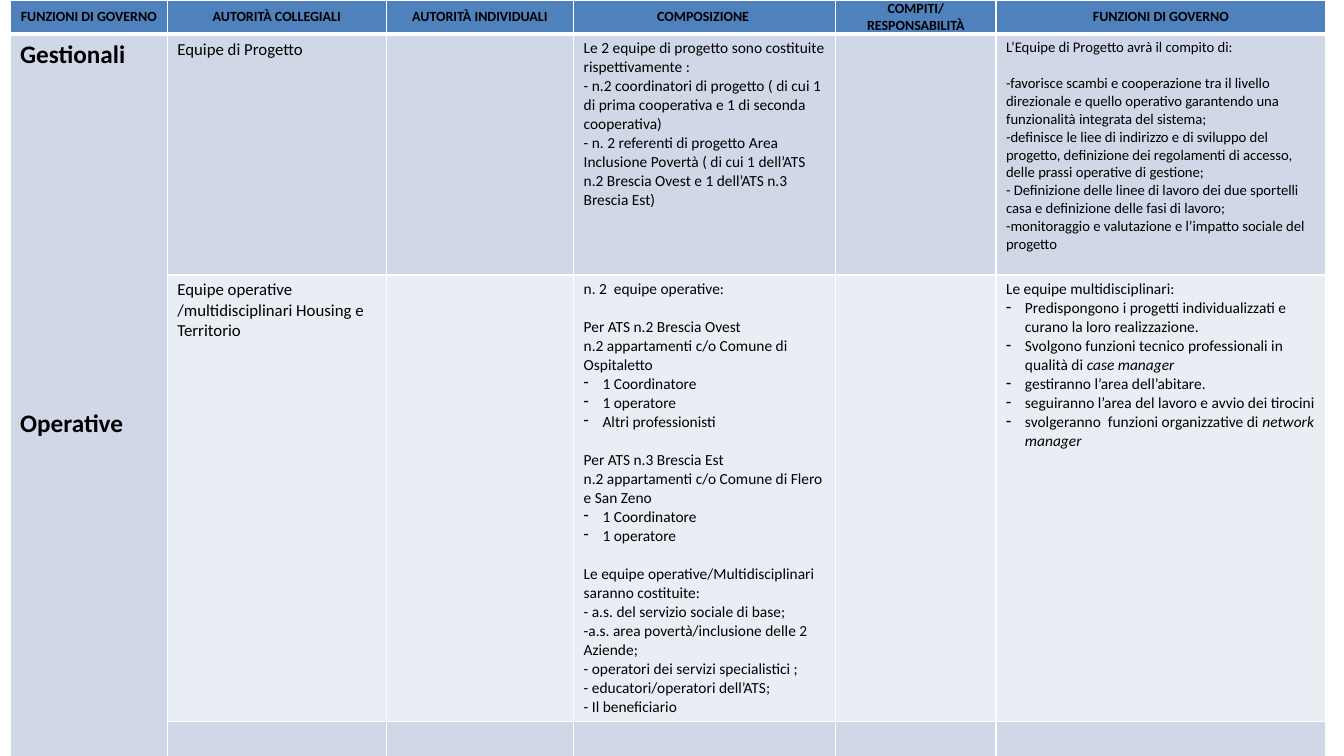
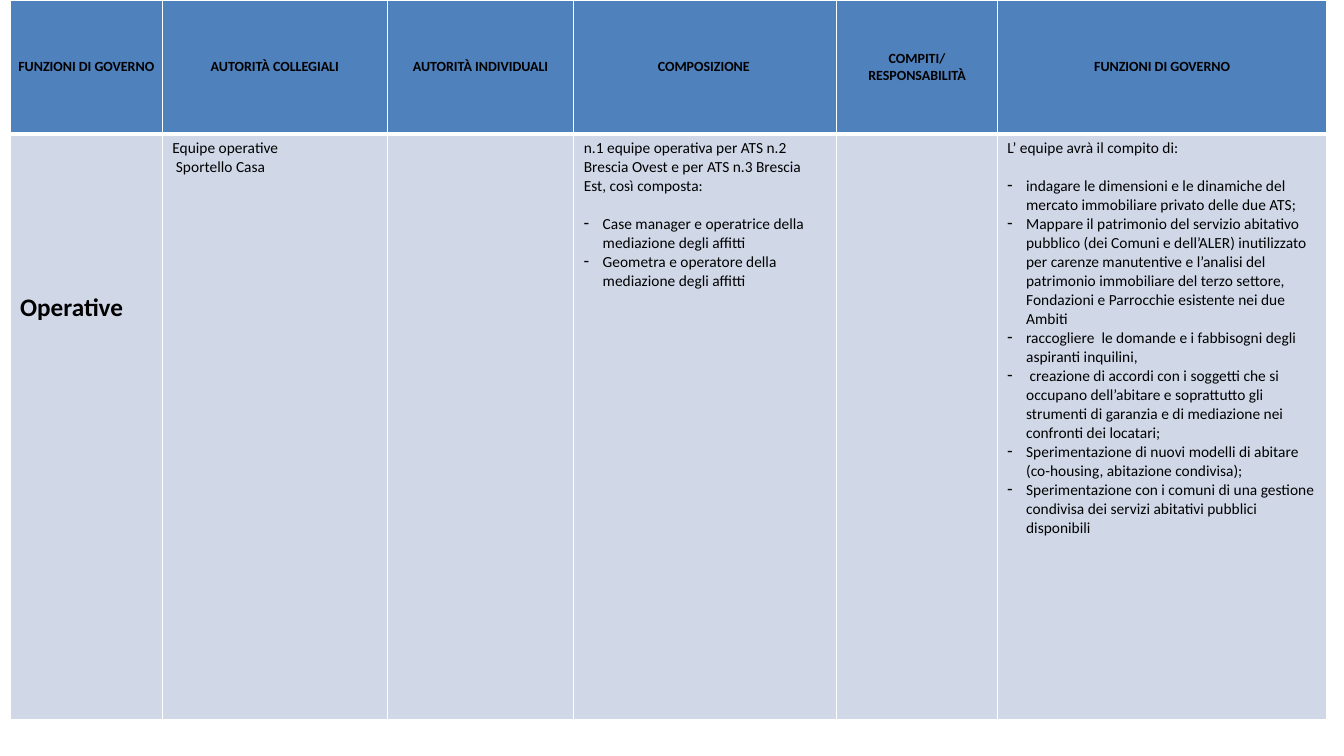
import collections

import lxml.etree
import pptx
import pptx.dml.color
import pptx.enum.text
import pptx.oxml.ns
import pptx.util

HEADER_BLUE = pptx.dml.color.RGBColor(0x4F, 0x81, 0xBD)
BAND_DARK = pptx.dml.color.RGBColor(0xD0, 0xD8, 0xE8)
BAND_LIGHT = pptx.dml.color.RGBColor(0xE9, 0xED, 0xF4)
INK = pptx.dml.color.RGBColor(0, 0, 0)
WHITE = pptx.dml.color.RGBColor(0xFF, 0xFF, 0xFF)

Line = collections.namedtuple("Line", "text italic dash gap", defaults=("", False, 0))
Entry = collections.namedtuple("Entry", "size lines bold lead", defaults=(False, 0))

HEADINGS = [
    "FUNZIONI DI GOVERNO", "AUTORITÀ COLLEGIALI", "AUTORITÀ INDIVIDUALI",
    "COMPOSIZIONE ", "COMPITI/RESPONSABILITÀ", "FUNZIONI DI GOVERNO",
]


def dashed(text, italic="", gap=0):
    return Line(text, italic, True, gap)


class GovernanceDeck:
    """Holds the shared table style and the slide being built."""

    FONT = "Calibri"
    LINE_HEIGHT = 1.22
    LEFT = 0.75
    HANGING = pptx.util.Pt(13.5)

    def __init__(self):
        self.deck = pptx.Presentation()
        self.deck.slide_width = pptx.util.Inches(13.33)
        self.deck.slide_height = pptx.util.Inches(7.5)
        self.slide = None

    def new_slide(self):
        self.slide = self.deck.slides.add_slide(self.deck.slide_layouts[6])

    def across(self, percent):
        return round(self.deck.slide_width * percent / 100)

    def down(self, percent):
        return round(self.deck.slide_height * percent / 100)

    def table(self, column_shares, row_shares, entries):
        table = self.slide.shapes.add_table(
            len(row_shares), len(column_shares), self.across(self.LEFT), 0,
            self.across(sum(column_shares)), self.down(sum(row_shares)),
        ).table
        for column, share in zip(table.columns, column_shares):
            column.width = self.across(share)
        for row, share in zip(table.rows, row_shares):
            row.height = self.down(share)
        for column, heading in enumerate(HEADINGS):
            self.heading(table.cell(0, column), heading)
        for row in range(1, len(row_shares)):
            for column in range(len(column_shares)):
                band = BAND_DARK if row % 2 or column == 0 else BAND_LIGHT
                self.paint(table.cell(row, column), band)
        if len(row_shares) > 2:
            table.cell(1, 0).merge(table.cell(len(row_shares) - 1, 0))
        for (row, column), entry in entries.items():
            self.entry(table.cell(row, column), entry)

    def paint(self, cell, colour, bottom_width=1):
        properties = cell._tc.get_or_add_tcPr()
        for side in "LRTB":
            width = bottom_width if side == "B" else 1
            border = lxml.etree.SubElement(
                properties, pptx.oxml.ns.qn(f"a:ln{side}"), w=str(pptx.util.Pt(width)))
            fill = lxml.etree.SubElement(border, pptx.oxml.ns.qn("a:solidFill"))
            lxml.etree.SubElement(fill, pptx.oxml.ns.qn("a:srgbClr"), val=str(WHITE))
        cell.fill.solid()
        cell.fill.fore_color.rgb = colour

    def heading(self, cell, text):
        self.paint(cell, HEADER_BLUE, bottom_width=3)
        cell.vertical_anchor = pptx.enum.text.MSO_ANCHOR.MIDDLE
        cell.margin_left = cell.margin_right = pptx.util.Inches(0.07)
        cell.margin_top = cell.margin_bottom = 0
        paragraph = cell.text_frame.paragraphs[0]
        paragraph.alignment = pptx.enum.text.PP_ALIGN.CENTER
        paragraph.space_before = paragraph.space_after = pptx.util.Pt(3)
        self.run(paragraph, text, 10, bold=True)

    def entry(self, cell, entry):
        if entry.lead:
            cell.margin_top = self.down(entry.lead)
        for index, line in enumerate(entry.lines):
            frame = cell.text_frame
            paragraph = frame.add_paragraph() if index else frame.paragraphs[0]
            if line.gap:
                paragraph.space_before = pptx.util.Pt(
                    round(line.gap * entry.size * self.LINE_HEIGHT, 1))
            if line.dash:
                self.dash(paragraph)
            self.run(paragraph, line.text, entry.size, entry.bold)
            if line.italic:
                self.run(paragraph, line.italic, entry.size, entry.bold, italic=True)

    def dash(self, paragraph):
        properties = paragraph._p.get_or_add_pPr()
        properties.set("marL", str(self.HANGING))
        properties.set("indent", str(-self.HANGING))
        lxml.etree.SubElement(properties, pptx.oxml.ns.qn("a:buChar"), char="-")

    def run(self, paragraph, text, size, bold=False, italic=False):
        run = paragraph.add_run()
        run.text = text
        run.font.name = self.FONT
        run.font.size = pptx.util.Pt(size)
        run.font.bold = bold
        run.font.italic = italic
        run.font.color.rgb = INK

    def save(self):
        self.deck.save("out.pptx")


PROJECT_AND_HOUSING = {
    (1, 0): Entry(18, [Line("Gestionali"), Line("Operative", gap=11)], bold=True),
    (1, 1): Entry(12, [Line("Equipe di Progetto")]),
    (1, 3): Entry(11, [
        Line("Le 2 equipe di progetto sono costituite rispettivamente :"),
        Line("- n.2 coordinatori di progetto ( di cui 1 di prima cooperativa "
             "e 1 di seconda cooperativa)"),
        Line("- n. 2 referenti di progetto Area Inclusione Povertà ( di cui 1 dell’ATS "
             "n.2 Brescia Ovest e 1 dell’ATS n.3 Brescia Est)"),
    ]),
    (1, 5): Entry(10.5, [
        Line("L’Equipe di Progetto avrà il compito di:"),
        Line("-favorisce scambi e cooperazione tra il livello direzionale e quello "
             "operativo garantendo una funzionalità integrata del sistema;", gap=1),
        Line("-definisce le liee di indirizzo e di sviluppo del progetto, definizione "
             "dei regolamenti di accesso, delle prassi operative di gestione;"),
        Line("- Definizione delle linee di lavoro dei due sportelli casa e definizione "
             "delle fasi di lavoro;"),
        Line("-monitoraggio e valutazione e l’impatto sociale del progetto"),
    ]),
    (2, 1): Entry(12, [Line("Equipe operative /multidisciplinari Housing e Territorio")]),
    (2, 3): Entry(11, [
        Line("n. 2  equipe operative:"),
        Line("Per ATS n.2 Brescia Ovest", gap=1),
        Line("n.2 appartamenti c/o Comune di Ospitaletto"),
        dashed("1 Coordinatore"),
        dashed("1 operatore"),
        dashed("Altri professionisti"),
        Line("Per ATS n.3 Brescia Est", gap=1),
        Line("n.2 appartamenti c/o Comune di Flero e San Zeno"),
        dashed("1 Coordinatore"),
        dashed("1 operatore"),
        Line("Le equipe operative/Multidisciplinari saranno costituite:", gap=1),
        Line("- a.s. del servizio sociale di base;"),
        Line("-a.s. area povertà/inclusione delle 2 Aziende;"),
        Line("- operatori dei servizi specialistici ;"),
        Line("- educatori/operatori dell’ATS;"),
        Line("- Il beneficiario"),
    ]),
    (2, 5): Entry(11, [
        Line("Le equipe multidisciplinari:"),
        dashed("Predispongono i progetti individualizzati e curano la loro realizzazione."),
        dashed("Svolgono funzioni tecnico professionali in qualità di ", "case manager"),
        dashed("gestiranno l’area dell’abitare."),
        dashed("seguiranno l’area del lavoro e avvio dei tirocini"),
        dashed("svolgeranno  funzioni organizzative di ", "network manager"),
    ]),
}

HOUSING_DESK = {
    (1, 0): Entry(18, [Line("Operative")], bold=True, lead=21),
    (1, 1): Entry(11, [Line("Equipe operative"), Line(" Sportello Casa")]),
    (1, 3): Entry(11, [
        Line("n.1 equipe operativa per ATS n.2 Brescia Ovest e per ATS n.3 Brescia Est, "
             "così composta:"),
        dashed("Case manager e operatrice della mediazione degli affitti", gap=1),
        dashed("Geometra e operatore della mediazione degli affitti"),
    ]),
    (1, 5): Entry(11, [
        Line("L’ equipe avrà il compito di:"),
        dashed("indagare le dimensioni e le dinamiche del mercato immobiliare privato "
               "delle due ATS;", gap=1),
        dashed("Mappare il patrimonio del servizio abitativo pubblico (dei Comuni e "
               "dell’ALER) inutilizzato per carenze manutentive e l’analisi del patrimonio "
               "immobiliare del terzo settore, Fondazioni e Parrocchie esistente nei due "
               "Ambiti"),
        dashed("raccogliere  le domande e i fabbisogni degli aspiranti inquilini,"),
        dashed(" creazione di accordi con i soggetti che si occupano dell’abitare e "
               "soprattutto gli strumenti di garanzia e di mediazione nei confronti dei "
               "locatari;"),
        dashed("Sperimentazione di nuovi modelli di abitare (co-housing, abitazione "
               "condivisa);"),
        dashed("Sperimentazione con i comuni di una gestione condivisa dei servizi "
               "abitativi pubblici disponibili"),
    ]),
}


def main():
    governance = GovernanceDeck()
    governance.new_slide()
    governance.table([11.7, 16.28, 13.95, 19.5, 11.93, 24.53],
                     [4.13, 31.87, 58.13, 5.07], PROJECT_AND_HOUSING)
    governance.new_slide()
    governance.table([11.33, 16.73, 13.88, 19.58, 11.93, 24.53],
                     [17.73, 77.47], HOUSING_DESK)
    governance.save()


if __name__ == "__main__":
    main()
